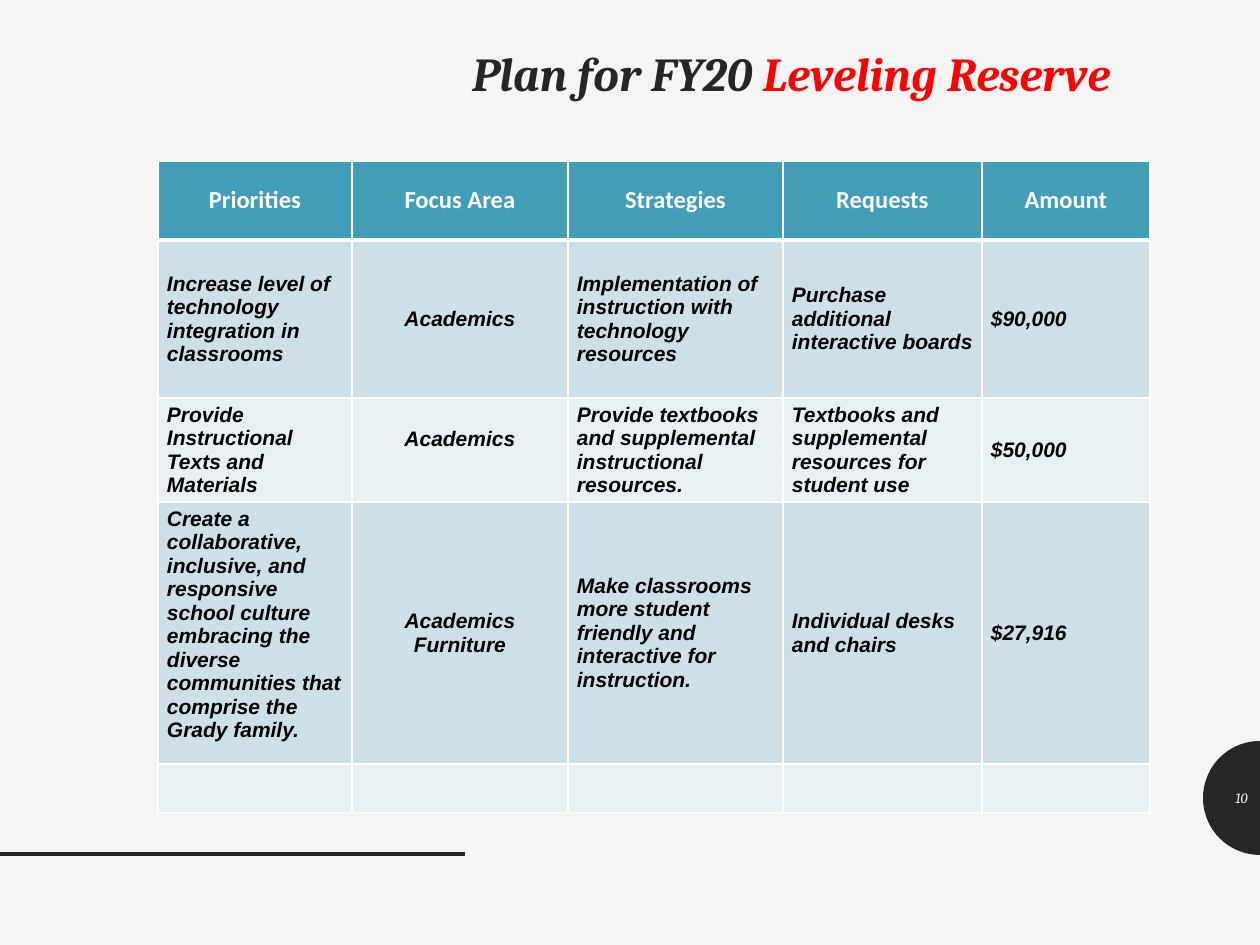
import math
from dataclasses import dataclass

from lxml import etree
from pptx import Presentation
from pptx import util as u
from pptx.dml.color import RGBColor
from pptx.enum import shapes, text
from pptx.oxml.ns import qn

PX = 914400 / 126
INK, PAPER, WHITE = "262626", "F5F5F5", "FFFFFF"
LEFT, CENTER, RIGHT = text.PP_ALIGN.LEFT, text.PP_ALIGN.CENTER, text.PP_ALIGN.RIGHT

TITLE_FONT = dict(name="Cambria", size=u.Pt(27), bold=True, italic=True)
HEAD_FONT = dict(name="Calibri", size=u.Pt(14), bold=True, italic=False)
BODY_FONT = dict(name="Arial", size=u.Pt(12), bold=True, italic=True)
NUMBER_FONT = dict(name="Cambria", size=u.Pt(8.2), bold=False, italic=True)

COLUMNS = [194, 216, 215, 199, 168]


@dataclass
class Row:
    height: int
    fill: str
    cells: list[str]
    color: str = "000000"


ROWS = [
    Row(79, "439EB7", ["Priorities", "Focus Area", "Strategies", "Requests", "Amount"], WHITE),
    Row(158, "CFDFE6", [
        "Increase level of technology integration in classrooms",
        "Academics",
        "Implementation of instruction with technology resources",
        "Purchase additional interactive boards",
        "$90,000",
    ]),
    Row(103, "E9F0F3", [
        "Provide Instructional Texts and Materials",
        "Academics",
        "Provide textbooks and supplemental instructional resources.",
        "Textbooks and supplemental resources for student use",
        "$50,000",
    ]),
    Row(262, "CFDFE6", [
        "Create a collaborative, inclusive, and responsive school culture embracing "
        "the diverse communities that comprise the Grady family.",
        "Academics Furniture",
        "Make classrooms more student friendly and interactive for instruction.",
        "Individual desks and chairs",
        "$27,916",
    ]),
    Row(46, "E9F0F3", [""] * len(COLUMNS)),
]
# Cells whose text sits above the middle: (row, column) -> bottom margin
RAISED = {(2, 1): 27, (3, 0): 22}


def px(n: float) -> int:
    return round(n * PX)


def rgb(value: str) -> RGBColor:
    return RGBColor.from_string(value)


def set_all(obj, values: dict) -> None:
    for name, value in values.items():
        setattr(obj, name, value)


def paint(fill, color: str) -> None:
    fill.solid()
    fill.fore_color.rgb = rgb(color)


def add_run(p, words: str, font: dict, color: str) -> None:
    r = p.add_run()
    r.text = words
    set_all(r.font, font)
    r.font.color.rgb = rgb(color)


def add_borders(cell, widths: dict[str, int]) -> None:
    """Put white borders before the fill, as the schema orders them."""
    tc_pr = cell._tc.get_or_add_tcPr()
    for i, (side, width) in enumerate(widths.items()):
        ln = etree.Element(qn(f"a:ln{side}"), w=str(u.Pt(width)))
        solid = etree.SubElement(ln, qn("a:solidFill"))
        etree.SubElement(solid, qn("a:srgbClr"), val=WHITE)
        tc_pr.insert(i, ln)


def add_half_disc(s, right: int, middle: int, radius: int) -> None:
    angles = [math.radians(90 + 5 * i) for i in range(37)]
    points = [(px(right + radius * math.cos(a)), px(middle + radius * math.sin(a)))
              for a in angles]
    builder = s.shapes.build_freeform(*points[0], scale=1.0)
    builder.add_line_segments(points[1:], close=True)
    sp = builder.convert_to_shape()
    sp.shadow.inherit = False
    paint(sp.fill, INK)
    sp.line.fill.background()


def add_rule(s, x1: int, x2: int, y: int) -> None:
    line = s.shapes.add_connector(shapes.MSO_CONNECTOR.STRAIGHT, px(x1), px(y), px(x2), px(y))
    line.line.color.rgb = rgb(INK)
    line.line.width = u.Pt(2)
    etree.SubElement(line._element.spPr, qn("a:effectLst"))


def add_title(s) -> None:
    title = s.shapes.title
    set_all(title, dict(left=px(136), top=px(44), width=px(987), height=px(102)))
    tf = title.text_frame
    set_all(tf, dict(word_wrap=True, auto_size=text.MSO_AUTO_SIZE.NONE,
                     vertical_anchor=text.MSO_ANCHOR.TOP))
    p = tf.paragraphs[0]
    set_all(p, dict(alignment=RIGHT, line_spacing=0.9))
    add_run(p, "Plan for FY20 ", TITLE_FONT, INK)
    add_run(p, "Leveling Reserve", TITLE_FONT, "FF0000")


def add_plan_table(s, left: int, top: int) -> None:
    width, height = sum(COLUMNS), sum(row.height for row in ROWS)
    table = s.shapes.add_table(len(ROWS), len(COLUMNS), px(left), px(top),
                               px(width), px(height)).table
    for column, column_width in zip(table.columns, COLUMNS):
        column.width = px(column_width)
    for i, row in enumerate(ROWS):
        table.rows[i].height = px(row.height)
        for j, words in enumerate(row.cells):
            cell = table.cell(i, j)
            set_all(cell, dict(vertical_anchor=text.MSO_ANCHOR.MIDDLE,
                               margin_left=px(9), margin_right=px(9), margin_top=px(5),
                               margin_bottom=px(RAISED.get((i, j), 5))))
            paint(cell.fill, row.fill)
            add_borders(cell, dict(L=1, R=1, T=3 if i == 1 else 1, B=3 if i == 0 else 1))
            p = cell.text_frame.paragraphs[0]
            p.alignment = CENTER if i == 0 or j == 1 else LEFT
            if words:
                add_run(p, words, BODY_FONT if i else HEAD_FONT, row.color)


def add_page_number(s, number: str) -> None:
    tf = s.shapes.add_textbox(px(1203), px(772), px(57), px(51)).text_frame
    set_all(tf, dict(word_wrap=True, vertical_anchor=text.MSO_ANCHOR.MIDDLE))
    p = tf.paragraphs[0]
    p.alignment = RIGHT
    add_run(p, number, NUMBER_FONT, PAPER)


def main() -> None:
    prs = Presentation()
    prs.slide_width, prs.slide_height = px(1260), px(945)
    s = prs.slides.add_slide(prs.slide_layouts[5])
    paint(s.background.fill, PAPER)
    add_half_disc(s, right=1260, middle=798, radius=57)
    add_rule(s, 0, 465, 854)
    add_title(s)
    add_plan_table(s, 158, 161)
    add_page_number(s, "10")
    prs.save("out.pptx")


if __name__ == "__main__":
    main()
